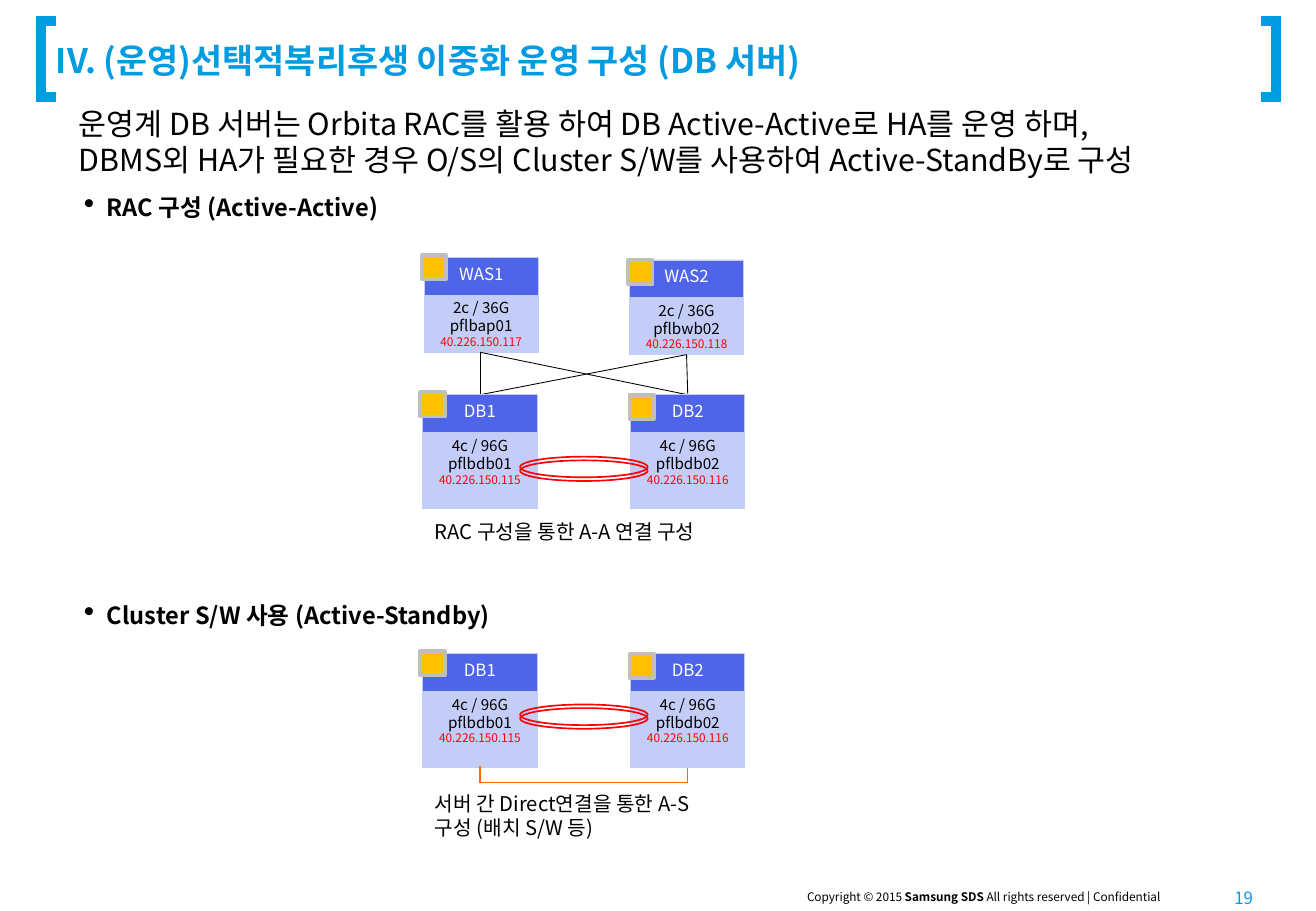
import pptx
import pptx.dml.color
import pptx.enum.shapes
import pptx.enum.text
import pptx.oxml.ns
import pptx.util
from lxml import etree

Inches = pptx.util.Inches
Pt = pptx.util.Pt
RGBColor = pptx.dml.color.RGBColor
Shape = pptx.enum.shapes.MSO_SHAPE
Align = pptx.enum.text.PP_ALIGN
Anchor = pptx.enum.text.MSO_ANCHOR
qn = pptx.oxml.ns.qn

FONT = "Noto Sans CJK KR"
LINE_HEIGHT = 1.185
BLACK = RGBColor(0x00, 0x00, 0x00)
WHITE = RGBColor(0xFF, 0xFF, 0xFF)
RED = RGBColor(0xFF, 0x00, 0x00)
ORANGE = RGBColor(0xFF, 0x66, 0x00)
CYAN = RGBColor(0x00, 0x9C, 0xE1)
PAGE_BLUE = RGBColor(0x03, 0x9B, 0xE7)
HEADER_BLUE = RGBColor(0x4F, 0x65, 0xE9)
PALE_BLUE = RGBColor(0xC4, 0xCC, 0xF8)
AMBER = RGBColor(0xFF, 0xC0, 0x00)
GREY = RGBColor(0xBF, 0xBF, 0xBF)

COLUMNS = (3.48, 5.19)
SERVER_WIDTH = 0.94
HEADER_HEIGHT = 0.31
DB_HEIGHT = 0.94
WAS_HEIGHT = 0.78


def add_run(paragraph, text, size=12, color=BLACK, bold=False):
    run = paragraph.add_run()
    run.text = text
    run.font.size = Pt(size)
    run.font.bold = bold
    run.font.color.rgb = color
    run.font.name = FONT
    etree.SubElement(run.font._element, qn("a:ea"), typeface=FONT)


def write(frame, text, size=12, color=BLACK, bold=False, align=Align.LEFT,
          anchor=Anchor.TOP, insets=(0.1, 0.05, 0.1, 0.05), bullet=False):
    """Fill a frame; text is a string or paragraphs, each a list of (text, format) runs."""
    frame.word_wrap = True
    frame.vertical_anchor = anchor
    (frame.margin_left, frame.margin_top,
     frame.margin_right, frame.margin_bottom) = map(Inches, insets)
    paragraphs = [[(text, {})]] if isinstance(text, str) else text
    for index, runs in enumerate(paragraphs):
        paragraph = frame.paragraphs[0] if index == 0 else frame.add_paragraph()
        if bullet:
            properties = paragraph._p.get_or_add_pPr()
            properties.set("marL", str(Inches(0.19)))
            properties.set("indent", str(Inches(-0.19)))
            etree.SubElement(properties, qn("a:buSzPct"), val="130000")
            etree.SubElement(properties, qn("a:buChar"), char="•")
            paragraph.space_after = Pt(5)
        paragraph.alignment = align
        largest = max(changes.get("size", size) for _, changes in runs)
        paragraph.line_spacing = Pt(round(largest * LINE_HEIGHT, 1))
        for part, changes in runs:
            style = {"size": size, "color": color, "bold": bold, **changes}
            lines = part.split("\n")
            for number, line in enumerate(lines):
                if number:
                    paragraph.add_line_break()
                add_run(paragraph, line, **style)


class Board:
    def __init__(self, slide):
        self.shapes = slide.shapes

    def text(self, left, top, width, height, text, **style):
        box = self.shapes.add_textbox(*map(Inches, (left, top, width, height)))
        write(box.text_frame, text, **style)

    def shape(self, kind, left, top, width, height, fill, line, weight):
        shape = self.shapes.add_shape(kind, *map(Inches, (left, top, width, height)))
        shape.shadow.inherit = False
        if fill is None:
            shape.fill.background()
        else:
            shape.fill.solid()
            shape.fill.fore_color.rgb = fill
        shape.line.color.rgb = line
        shape.line.width = Pt(weight)
        return shape

    def line(self, start, end):
        connector = self.shapes.add_connector(
            pptx.enum.shapes.MSO_CONNECTOR.STRAIGHT, *map(Inches, (*start, *end)))
        connector.line.color.rgb = BLACK
        connector.line.width = Pt(0.5)
        etree.SubElement(connector._element.spPr, qn("a:effectLst"))

    def outline(self, points, color, weight):
        """Draw an open path with square corners."""
        corners = [(Inches(x), Inches(y)) for x, y in points]
        builder = self.shapes.build_freeform(*corners[0])
        builder.add_line_segments(corners[1:], close=False)
        path = builder.convert_to_shape()
        path.shadow.inherit = False
        path.fill.background()
        path.line.color.rgb = color
        path.line.width = Pt(weight)
        etree.SubElement(path.line._get_or_add_ln(), qn("a:miter"), lim="800000")

    def server(self, left, top, height, name, capacity, host, address):
        header = self.shape(Shape.RECTANGLE, left, top, SERVER_WIDTH, height,
                            HEADER_BLUE, PALE_BLUE, 0.5)
        write(header.text_frame, name, size=10, color=WHITE, align=Align.CENTER)
        details = self.shape(Shape.RECTANGLE, left, top + HEADER_HEIGHT, SERVER_WIDTH,
                             height - HEADER_HEIGHT, PALE_BLUE, PALE_BLUE, 0.5)
        bottom = 0.2 if height == DB_HEIGHT else 0.05
        write(details.text_frame,
              [[(capacity, {})], [(host, {})], [(address, {"size": 7, "color": RED})]],
              size=9, align=Align.CENTER, anchor=Anchor.MIDDLE,
              insets=(0.1, 0.05, 0.1, bottom))
        dx, dy = (0.02, 0.02) if left < 5 else (0.01, 0)
        self.shape(Shape.RECTANGLE, left - dx, top - dy, 0.2, 0.2, AMBER, GREY, 2.25)

    def db_pair(self, top, ring_top):
        for number, left in enumerate(COLUMNS, 1):
            self.server(left, top, DB_HEIGHT, f"DB{number}", "4c / 96G",
                        f"pflbdb0{number}", f"40.226.150.{114 + number}")
        for ring in (ring_top, ring_top + 0.03):
            self.shape(Shape.OVAL, 4.28, ring, 1.05, 0.17, None, RED, 1)

    def heading(self, top, text):
        self.text(0.61, top, 4.42, 0.47, text, size=14, bold=True, bullet=True,
                  anchor=Anchor.MIDDLE, insets=(0.08, 0.12, 0.08, 0.12))


def main():
    deck = pptx.Presentation()
    deck.slide_width, deck.slide_height = Inches(10.83), Inches(7.5)
    board = Board(deck.slides.add_slide(deck.slide_layouts[6]))

    for tip, edge in ((0.46, 0.34), (10.38, 10.5)):
        board.outline([(tip, 0.8), (edge, 0.8), (edge, 0.17), (tip, 0.17)], CYAN, 6)
    board.text(0.46, 0.24, 8.98, 0.51, "IV. (운영)선택적복리후생 이중화 운영 구성 (DB 서버)",
               size=20, color=CYAN, bold=True, anchor=Anchor.MIDDLE,
               insets=(0, 0.05, 0.1, 0.05))
    board.text(0.61, 0.82, 9.61, 0.69,
               "운영계 DB 서버는 Orbita RAC를 활용 하여 DB Active-Active로 HA를 운영 하며,\n"
               "DBMS외 HA가 필요한 경우 O/S의 Cluster S/W를 사용하여 Active-StandBy로 구성",
               size=18, anchor=Anchor.MIDDLE, insets=(0.04, 0.04, 0.04, 0.04))

    board.heading(1.47, "RAC 구성 (Active-Active)")
    board.server(3.49, 2.12, WAS_HEIGHT, "WAS1", "2c / 36G", "pflbap01", "40.226.150.117")
    board.server(5.18, 2.14, WAS_HEIGHT, "WAS2", "2c / 36G", "pflbwb02", "40.226.150.118")
    for was in ((3.95, 2.9), (5.65, 2.92)):
        for db in ((3.95, 3.25), (5.66, 3.25)):
            board.line(was, db)
    board.db_pair(3.25, 3.76)
    board.text(3.48, 4.23, 2.73, 0.3, "RAC 구성을 통한 A-A 연결 구성")

    board.heading(4.83, "Cluster S/W 사용 (Active-Standby)")
    board.db_pair(5.38, 5.8)
    board.outline([(3.95, 6.31), (3.95, 6.44), (5.66, 6.44), (5.66, 6.32)], ORANGE, 0.75)
    board.text(3.48, 6.47, 2.65, 0.5, "서버 간 Direct연결을 통한 A-S\n구성 (배치 S/W 등)")

    board.text(5.73, 7.28, 3.94, 0.22,
               [[("Copyright © 2015 ", {}), ("Samsung SDS ", {"bold": True}),
                 ("All rights reserved | Confidential", {})]],
               size=7, align=Align.RIGHT, insets=(0, 0.05, 0.12, 0.05))
    board.text(9.94, 7.29, 0.47, 0.2, "19", size=10, color=PAGE_BLUE,
               align=Align.RIGHT, anchor=Anchor.MIDDLE)
    deck.save("out.pptx")


if __name__ == "__main__":
    main()
